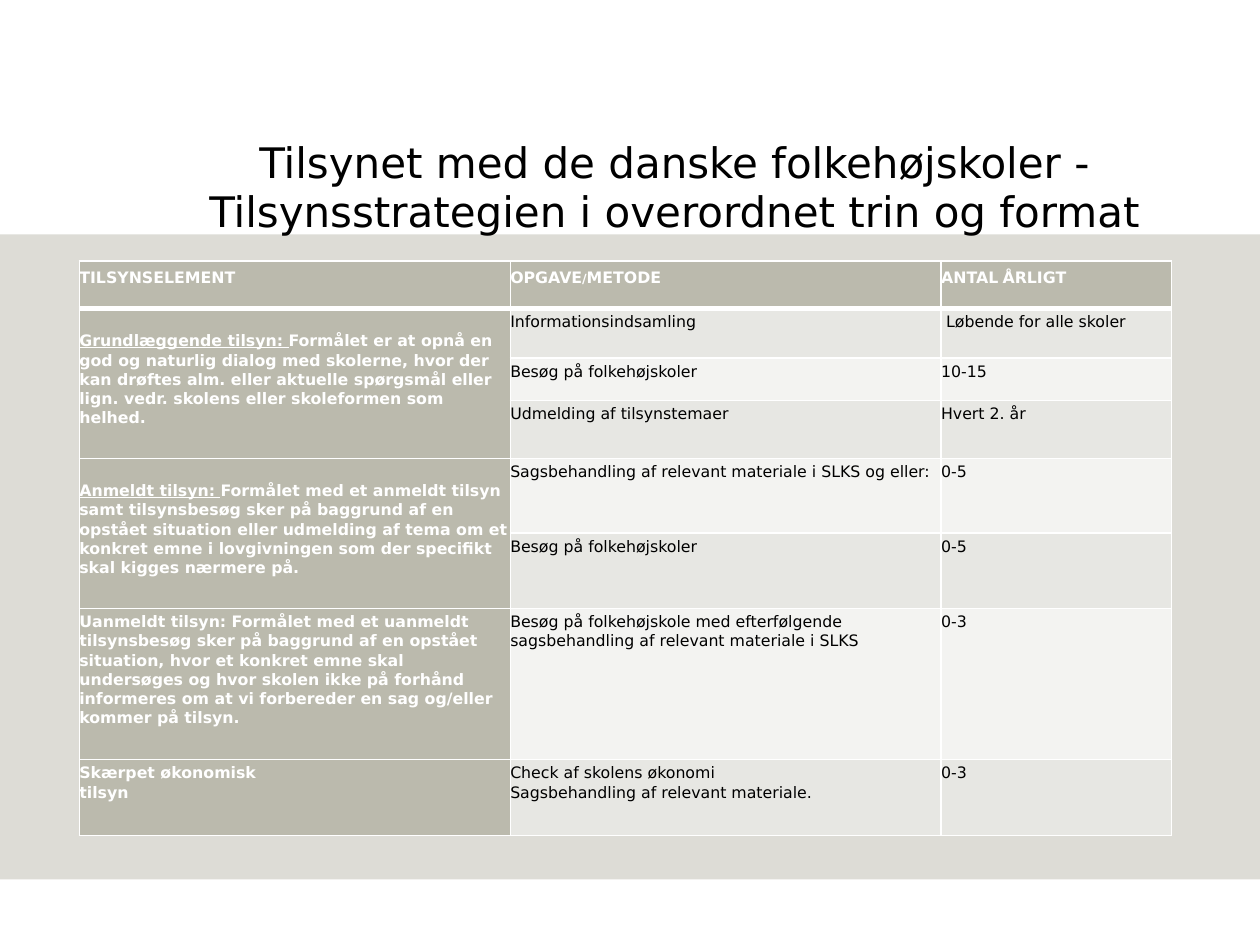
from pptx import Presentation
from pptx.dml.color import RGBColor
from pptx.enum.shapes import MSO_SHAPE
from pptx.enum.text import PP_ALIGN
from pptx.oxml import parse_xml
from pptx.oxml.ns import nsdecls
from pptx.util import Inches, Pt

COLORS = {
    "band": "DDDCD6",
    "heading": "BBBAAD",
    "odd": "E7E7E3",
    "even": "F3F3F1",
    "white": "FFFFFF",
    "black": "000000",
}
FONT = "DejaVu Sans"
COLUMN_WIDTHS = [3.42, 3.42, 1.83]
ROW_HEIGHTS = [0.38, 0.39, 0.34, 0.46, 0.59, 0.6, 1.2, 0.6]
ROWS = [
    ["TILSYNSELEMENT", "OPGAVE/METODE", "ANTAL ÅRLIGT"],
    ["Formålet er at opnå en god og naturlig dialog med skolerne, hvor der kan drøftes alm. "
     "eller aktuelle spørgsmål eller lign. vedr. skolens eller skoleformen som helhed.",
     "Informationsindsamling", "Løbende for alle skoler"],
    ["", "Besøg på folkehøjskoler", "10-15"],
    ["", "Udmelding af tilsynstemaer", "Hvert 2. år"],
    ["Formålet med et anmeldt tilsyn samt tilsynsbesøg sker på baggrund af en opstået situation "
     "eller udmelding af tema om et konkret emne i lovgivningen som der specifikt skal kigges nærmere på.",
     "Sagsbehandling af relevant materiale i SLKS og eller:", "0-5"],
    ["", "Besøg på folkehøjskoler", "0-5"],
    ["Uanmeldt tilsyn: Formålet med et uanmeldt tilsynsbesøg sker på baggrund af en opstået situation, "
     "hvor et konkret emne skal undersøges og hvor skolen ikke på forhånd informeres om at vi forbereder "
     "en sag og/eller kommer på tilsyn.",
     "Besøg på folkehøjskole med efterfølgende sagsbehandling af relevant materiale i SLKS", "0-3"],
    ["Skærpet økonomisk\ntilsyn",
     "Check af skolens økonomi\nSagsbehandling af relevant materiale.", "0-3"],
]
UNDERLINED_LEADS = {1: "Grundlæggende tilsyn: ", 4: "Anmeldt tilsyn: "}


def set_font(font, size, color, bold=False):
    font.name = FONT
    font.size = Pt(size)
    font.bold = bold
    font.color.rgb = RGBColor.from_string(COLORS[color])


def add_border(cell, side, width):
    cell._tc.get_or_add_tcPr().append(parse_xml(
        f'<a:ln{side} {nsdecls("a")} w="{Pt(width)}"><a:solidFill>'
        f'<a:srgbClr val="{COLORS["white"]}"/></a:solidFill></a:ln{side}>'))


deck = Presentation()
deck.slide_width = Inches(10)
deck.slide_height = Inches(7.5)
page = deck.slides.add_slide(deck.slide_layouts[6])

band = page.shapes.add_shape(
    MSO_SHAPE.RECTANGLE, Inches(0), Inches(1.86), Inches(10), Inches(5.12))
band.shadow.inherit = False
band.fill.solid()
band.fill.fore_color.rgb = RGBColor.from_string(COLORS["band"])
band.line.fill.background()

title = page.shapes.add_textbox(Inches(1.22), Inches(1.11), Inches(8.27), Inches(0.95)).text_frame
title.word_wrap = True
title.margin_left = title.margin_right = title.margin_top = title.margin_bottom = 0
title.text = "Tilsynet med de danske folkehøjskoler - Tilsynsstrategien i overordnet trin og format"
title_para = title.paragraphs[0]
title_para.alignment = PP_ALIGN.CENTER
title_para.line_spacing = 0.97
set_font(title_para.font, 24, "black")

table = page.shapes.add_table(
    len(ROWS), len(COLUMN_WIDTHS), Inches(0.63), Inches(2.07), Inches(8.66), Inches(4.56)).table
table.first_row = False
table.horz_banding = False
for column, width in zip(table.columns, COLUMN_WIDTHS):
    column.width = Inches(width)
for row, height in zip(table.rows, ROW_HEIGHTS):
    row.height = Inches(height)

for row_index, texts in enumerate(ROWS):
    for column_index, text in enumerate(texts):
        cell = table.cell(row_index, column_index)
        is_header = row_index == 0
        is_heading = is_header or column_index == 0
        cell.margin_left = cell.margin_right = 0
        cell.margin_top = cell.margin_bottom = Inches(0.03)
        for side in "LRTB":
            header_edge = (row_index, side) in [(0, "B"), (1, "T")]
            add_border(cell, side, 3 if header_edge else 1)
        fill = "heading" if is_heading else "odd" if row_index % 2 else "even"
        cell.fill.solid()
        cell.fill.fore_color.rgb = RGBColor.from_string(COLORS[fill])

        frame = cell.text_frame
        if column_index == 0 and row_index in UNDERLINED_LEADS:
            cell.margin_top = Inches(0.18)
            lead = frame.paragraphs[0].add_run()
            lead.text = UNDERLINED_LEADS[row_index]
            lead.font.underline = True
            frame.paragraphs[0].add_run().text = text
        else:
            frame.text = text
        for para in frame.paragraphs:
            para.line_spacing = Pt(13 if is_header else 11)
            set_font(para.font, 9, "white" if is_heading else "black", is_heading)
            if is_header:
                for span in para.runs:
                    span._r.get_or_add_rPr().set("cap", "small")

table.cell(1, 2).margin_left = Inches(0.04)
table.cell(1, 0).merge(table.cell(3, 0))
table.cell(4, 0).merge(table.cell(5, 0))

deck.save("out.pptx")
